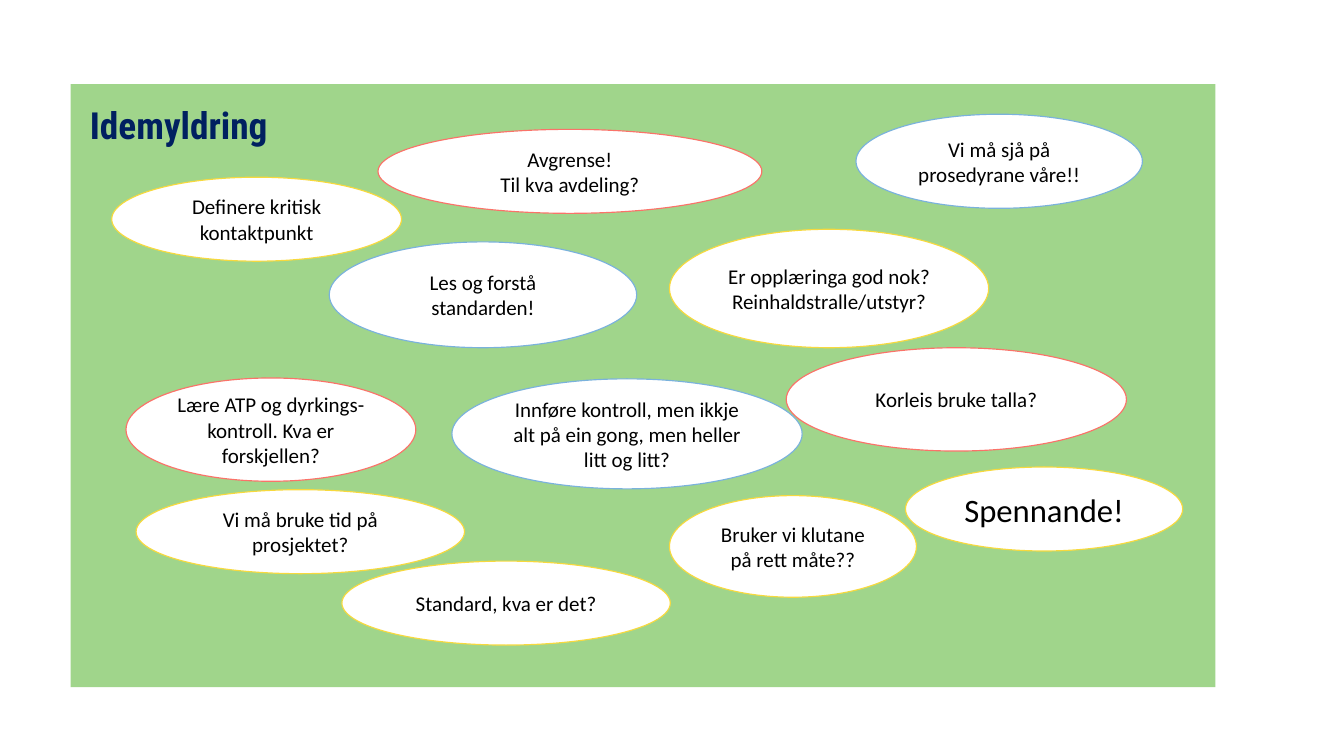
from pptx import Presentation
from pptx.dml.color import RGBColor
from pptx.enum.shapes import MSO_SHAPE
from pptx.enum.text import MSO_ANCHOR, MSO_AUTO_SIZE, PP_ALIGN
from pptx.util import Inches, Pt

OVAL = MSO_SHAPE.OVAL
TOP, MIDDLE = MSO_ANCHOR.TOP, MSO_ANCHOR.MIDDLE
LEFT, CENTER = PP_ALIGN.LEFT, PP_ALIGN.CENTER
NO_AUTOFIT = MSO_AUTO_SIZE.NONE

YELLOW, RED, BLUE = "F7D93E", "FA7369", "7AB2DC"
BOARD = (0.84, 1, 13.63, 7.18)
IDEAS = [
    (7.13, 1.73, 3.8, 1.41, YELLOW, 18, "Er opplæringa god nok? Reinhaldstralle/utstyr?"),
    (0.49, 1.11, 3.45, 1, YELLOW, 18, "Definere kritisk kontaktpunkt"),
    (0.66, 3.5, 3.45, 1.23, RED, 18, "Lære ATP og dyrkings- kontroll. Kva er forskjellen?"),
    (3.66, 0.54, 4.57, 1, RED, 18, "Avgrense!\nTil kva avdeling?"),
    (8.52, 3.14, 4.05, 1.23, RED, 18, "Korleis bruke talla?"),
    (7.13, 4.9, 2.94, 1.21, YELLOW, 18, "Bruker vi klutane på rett måte??"),
    (3.23, 5.68, 3.91, 1, YELLOW, 18, "Standard, kva er det?"),
    (4.54, 3.51, 4.17, 1.31, BLUE, 18,
     "Innføre kontroll, men ikkje alt på ein gong, men heller litt og litt?"),
    (3.08, 1.88, 3.66, 1.26, BLUE, 18, "Les og forstå standarden!"),
    (9.35, 0.36, 3.41, 1.12, BLUE, 18, "Vi må sjå på prosedyrane våre!!"),
    (0.78, 4.83, 3.91, 1, YELLOW, 18, "Vi må bruke tid på prosjektet?"),
    (9.94, 4.56, 3.3, 1, YELLOW, 28, "Spennande!"),
]


def color(value):
    return RGBColor.from_string(value)


def fill(sp, value):
    sp.fill.solid()
    sp.fill.fore_color.rgb = color(value)


def style(p, font, size, value, align):
    p.alignment = align
    p.font.name = font
    p.font.size = Pt(size)
    p.font.color.rgb = color(value)


def add_board(slide, box):
    sp = slide.shapes.title
    sp.left, sp.top, sp.width, sp.height = map(Inches, box)
    fill(sp, "A0D58B")
    tf = sp.text_frame
    tf.text = "Idemyldring"
    tf.word_wrap = True
    tf.auto_size = NO_AUTOFIT
    tf.vertical_anchor = TOP
    tf.margin_left, tf.margin_top = Inches(0.23), Inches(0.22)
    p = tf.paragraphs[0]
    style(p, "Roboto Condensed", 32, "002060", LEFT)
    p.font.bold = True


def add_bubble(slide, box, outline, size, text):
    sp = slide.shapes.add_shape(OVAL, *map(Inches, box))
    sp.shadow.inherit = False
    fill(sp, "FFFFFF")
    sp.line.color.rgb = color(outline)
    sp.line.width = Pt(1)
    tf = sp.text_frame
    tf.text = text
    tf.word_wrap = True
    tf.vertical_anchor = MIDDLE
    for p in tf.paragraphs:
        style(p, "Calibri", size, "000000", CENTER)


def add_brainstorm(slide, box):
    add_board(slide, box)
    left, top = box[:2]
    for dx, dy, width, height, outline, size, text in IDEAS:
        add_bubble(slide, (left + dx, top + dy, width, height), outline, size, text)


def main():
    prs = Presentation()
    prs.slide_width, prs.slide_height = Inches(16), Inches(9)
    slide = prs.slides.add_slide(prs.slide_layouts[5])
    add_brainstorm(slide, BOARD)
    prs.save("out.pptx")


if __name__ == "__main__":
    main()
